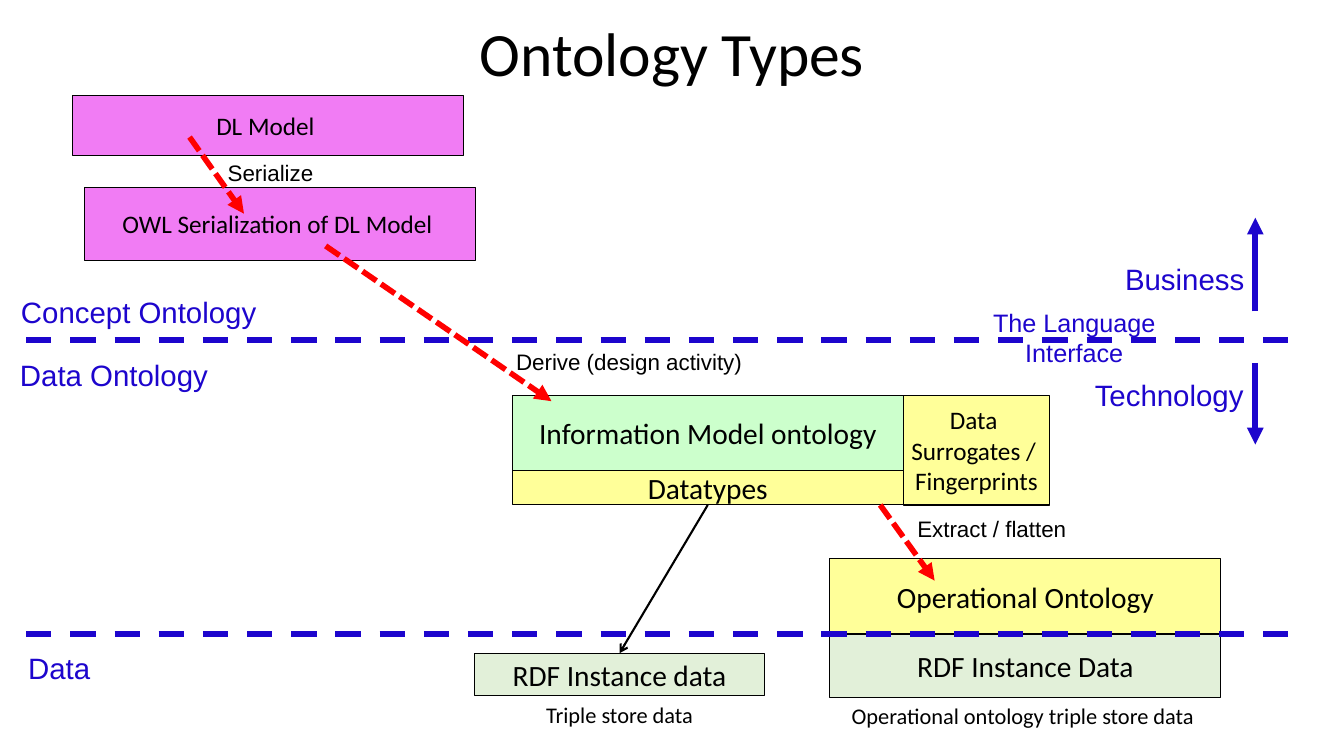
from lxml.etree import SubElement
from pptx import Presentation
from pptx.dml.color import RGBColor
from pptx.enum.dml import MSO_LINE
from pptx.enum.shapes import MSO_CONNECTOR, MSO_SHAPE
from pptx.enum.text import MSO_ANCHOR, MSO_AUTO_SIZE, PP_ALIGN
from pptx.oxml.ns import qn
from pptx.util import Inches, Pt

BLACK, BLUE, RED = "000000", "1D05CD", "FF0000"
PINK, MINT, YELLOW, SAGE = "F17CF4", "CCFFCC", "FFFF99", "E2F0D9"
WIDE = 38.8


def color(code):
    return RGBColor.from_string(code)


def write(frame, text, size=21, font="Arial", ink=BLACK, align=PP_ALIGN.LEFT,
          anchor=MSO_ANCHOR.TOP, wrap=True, spacing=None):
    frame.word_wrap = wrap
    frame.vertical_anchor = anchor
    frame.text = text
    for para in frame.paragraphs:
        para.alignment = align
        para.line_spacing = spacing
        para.font.size = Pt(size)
        para.font.name = font
        para.font.color.rgb = color(ink)


class Canvas:
    """Draws styled elements on one slide, with a grid of ten cells to the inch."""

    def __init__(self, deck):
        self.cell = Inches(0.1)
        self.shapes = deck.slides.add_slide(deck.slide_layouts[6]).shapes

    def grid(self, *cells):
        return [round(n * self.cell) for n in cells]

    def box(self, text, spot, fill, size=21):
        rect = self.shapes.add_shape(MSO_SHAPE.RECTANGLE, *self.grid(*spot))
        rect.shadow.inherit = False
        rect.fill.solid()
        rect.fill.fore_color.rgb = color(fill)
        rect.line.color.rgb = color(BLACK)
        rect.line.width = Pt(0.75)
        write(rect.text_frame, text, size, "Calibri", align=PP_ALIGN.CENTER,
              anchor=MSO_ANCHOR.MIDDLE, wrap=False)
        return rect

    def label(self, text, spot, grow=True, **style):
        frame = self.shapes.add_textbox(*self.grid(*spot)).text_frame
        write(frame, text, **style)
        frame.auto_size = MSO_AUTO_SIZE.SHAPE_TO_FIT_TEXT if grow else MSO_AUTO_SIZE.NONE

    def line(self, ends, ink, width, dash=None, head=None):
        link = self.shapes.add_connector(MSO_CONNECTOR.STRAIGHT, *self.grid(*ends))
        link.line.color.rgb = color(ink)
        link.line.width = Pt(width)
        if dash:
            link.line.dash_style = dash
        if head:
            SubElement(link.line._get_or_add_ln(), qn("a:tailEnd"), type=head)
        SubElement(link._element.spPr, qn("a:effectLst"))
        return link


def main():
    deck = Presentation()
    deck.slide_width, deck.slide_height = Inches(13.33), Inches(7.5)
    page = Canvas(deck)
    mid = PP_ALIGN.CENTER

    page.label("Ontology Types", (0, 0, 133.3, 11.3), grow=False, size=44,
               font="Calibri", align=mid, anchor=MSO_ANCHOR.MIDDLE, spacing=0.9)

    for text, spot in (
        ("Business", (110.6, 25.4, 15, 4.5)),
        ("Technology", (107.6, 36.9, 16.9, 4.5)),
        ("Concept Ontology", (1.1, 28.7, 28.3, 4.5)),
        ("Data Ontology", (1, 34.9, 28.3, 4.5)),
        ("Data", (1.8, 64, 21.8, 4.5)),
    ):
        page.label(text, spot, ink=BLUE)
    page.label("The Language Interface", (95, 30, 23.1, 7.1), size=18, ink=BLUE, align=mid)

    page.box("DL Model ", (7.2, 9.5, WIDE, 5.9), PINK, 18)
    page.box("OWL Serialization of DL Model ", (8.4, 18.6, WIDE, 7.2), PINK, 18)
    page.box("Information Model ontology", (50.8, 39.2, WIDE, 7.5), MINT)
    types = page.box("Datatypes", (50.8, 46.7, WIDE, 3.4), YELLOW)
    page.box("Data \nSurrogates / \nFingerprints", (89.6, 39.2, 14.5, 10.9), YELLOW, 18)
    page.box("Operational Ontology", (82.3, 55.4, WIDE, 7.5), YELLOW)
    page.box("RDF Instance Data", (82.3, 62.9, WIDE, 6.3), SAGE)
    store = page.box("RDF Instance data", (47.1, 64.8, 28.7, 4.2), SAGE)

    for right, row in ((128.9, 33.7), (128.2, 62.9)):
        page.line((2.6, row, right, row), BLUE, 4.5, MSO_LINE.DASH)
    for start, end in ((36, 44.1), (30.9, 21.6)):
        page.line((124.5, start, 124.5, end), BLUE, 4, head="triangle")
    for ends in ((18.8, 13.6, 24.2, 21.2), (32.3, 24.4, 54.7, 39.8), (87.3, 50.1, 92.7, 57.6)):
        page.line(ends, RED, 4, MSO_LINE.SQUARE_DOT, "triangle")
    link = page.line((70.2, 50.1, 61.45, 64.8), BLACK, 1.5, head="arrow")
    link.begin_connect(types, 2)
    link.end_connect(store, 0)

    for text, spot in (
        ("Serialize", (21.6, 15.3, 10.6, 3.7)),
        ("Derive (design activity)", (50.2, 34, 24.7, 3.7)),
        ("Extract / flatten", (90, 50.6, 17, 3.7)),
    ):
        page.label(text, spot, size=16, wrap=False)
    for text, spot in (
        ("Triple store data", (47.1, 69.1, 28.7, 3.7)),
        ("Operational ontology triple store data", (82.3, 69.2, 38.3, 3.7)),
    ):
        page.label(text, spot, size=16, font="Calibri", align=mid)

    deck.save("out.pptx")


if __name__ == "__main__":
    main()
